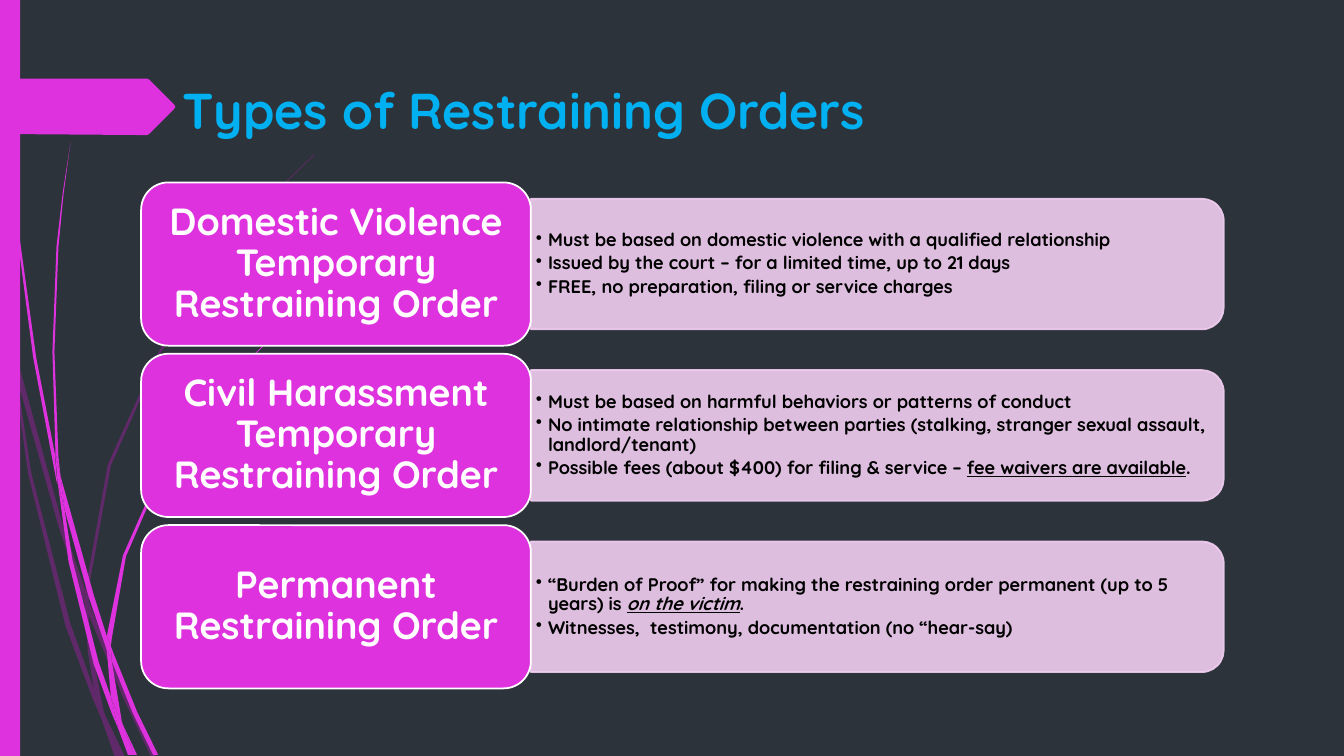
import pptx
import pptx.dml.color
import pptx.enum.shapes
import pptx.enum.text
import pptx.oxml
import pptx.oxml.ns
import pptx.util

Pt = pptx.util.Pt
Shapes = pptx.enum.shapes.MSO_SHAPE
Align = pptx.enum.text.PP_ALIGN
Anchor = pptx.enum.text.MSO_ANCHOR

FONT = "Quicksand"
MAGENTA, PLUM, PANEL = "DE32DE", "B01CB0", "F2CEF2"
GRID = Pt(0.72)

PLUM_WISPS = [
    [(11, 350), (9, 322), (0, 282), (0, 299), (10, 344)],
    [(58, 522), (84, 599), (85, 586), (62, 520), (14, 345), (17, 376)],
    [(92, 607), (88, 596), (88, 610), (123, 694), (150, 751), (155, 751), (127, 692)],
    [(119, 751), (124, 751), (105, 711)],
    [(93, 683), (70, 619), (31, 469), (17, 376), (11, 350), (28, 470), (65, 621),
     (92, 693), (101, 714), (99, 707)],
    [(84, 599), (87, 646), (93, 683), (96, 692), (105, 711), (103, 706), (91, 646),
     (88, 610), (88, 608)],
    [(88, 584), (110, 462), (160, 349), (229, 245), (268, 198), (290, 175), (312, 154),
     (312, 153), (289, 175), (268, 197), (228, 244), (158, 348), (107, 461), (85, 584),
     (85, 586), (88, 596)],
    [(101, 714), (114, 751), (119, 751)],
    [(88, 608), (88, 610), (88, 596), (85, 586), (84, 599)],
    [(96, 692), (93, 683), (99, 707), (101, 714), (119, 751), (105, 711)],
]
MAGENTA_WISPS = [
    [(7, 110), (17, 233), (33, 355), (56, 477), (57, 481), (55, 457), (55, 453),
     (36, 355), (19, 232), (8, 109), (5, 48), (4, 0), (3, 0), (4, 48)],
    [(88, 592), (106, 645), (106, 633), (106, 631), (93, 590), (60, 472), (64, 505)],
    [(113, 649), (110, 641), (111, 656), (132, 708), (152, 749), (157, 749), (136, 706)],
    [(110, 691), (98, 657), (72, 556), (64, 505), (57, 477), (68, 557), (93, 659),
     (111, 708), (117, 722), (116, 717)],
    [(60, 472), (58, 453), (54, 349), (58, 245), (63, 193), (70, 141), (62, 193),
     (56, 245), (52, 349), (55, 449)],
    [(133, 749), (136, 749), (122, 719)],
    [(57, 477), (64, 505), (60, 472), (55, 449), (55, 453)],
    [(111, 633), (125, 552), (158, 476), (205, 406), (231, 374), (245, 359), (261, 344),
     (260, 344), (245, 358), (231, 373), (204, 405), (156, 474), (122, 551), (106, 631),
     (110, 641)],
    [(117, 722), (127, 749), (131, 749)],
    [(106, 645), (110, 691), (116, 706), (122, 719), (121, 716), (111, 656), (109, 651)],
    [(106, 645), (109, 651), (111, 656), (110, 641), (106, 631), (106, 633)],
    [(116, 706), (110, 691), (116, 717), (117, 722), (130, 749), (133, 749), (122, 719)],
]
TITLE_ARROW = [(173, 108), (148, 133), (146, 134), (136, 134), (0, 133), (0, 78),
               (146, 78), (148, 79), (173, 104), (174, 106)]

ORDERS = [
    ("Domestic Violence Temporary Restraining Order", [
        [("Must be based on domestic violence with a qualified relationship", {})],
        [("Issued by the court – for a limited time, up to 21 days", {})],
        [("FREE, no preparation, filing or service charges", {})],
    ]),
    ("Civil Harassment Temporary Restraining Order", [
        [("Must be based on harmful behaviors or patterns of conduct", {})],
        [("No intimate relationship between parties (stalking, stranger sexual assault, "
          "landlord/tenant)", {})],
        [("Possible fees (about $400) for filing & service – ", {}),
         ("fee waivers are available", {"underline": True}), (".", {})],
    ]),
    ("Permanent Restraining Order", [
        [("“Burden of Proof” for making the restraining order permanent (up to 5 years) is ", {}),
         ("on the victim", {"italic": True, "underline": True}), (".", {})],
        [("Witnesses,  testimony, documentation (no “hear-say)", {})],
    ]),
]


def color(target, value, alpha=100):
    target.solid()
    target.fore_color.rgb = pptx.dml.color.RGBColor.from_string(value)
    if alpha < 100:
        node = target.fore_color._color._xClr
        child = pptx.oxml.parse_xml(
            f'<a:alpha {pptx.oxml.ns.nsdecls("a")} val="{alpha * 1000}"/>')
        node.append(child)


def paint(shape, fill, alpha=100, line=None):
    shape.shadow.inherit = False
    color(shape.fill, fill, alpha)
    if line:
        color(shape.line.fill, line, alpha)
        shape.line.width = Pt(1.25)
    else:
        shape.line.fill.background()


def add_text(para, text, size, fill, italic=None, underline=None):
    span = para.add_run()
    span.text = text
    span.font.name, span.font.size, span.font.bold = FONT, Pt(size), True
    span.font.italic, span.font.underline = italic, underline
    color(span.font.fill, fill)


def set_frame(frame, across, down):
    frame.word_wrap = True
    frame.auto_size = pptx.enum.text.MSO_AUTO_SIZE.NONE
    frame.vertical_anchor = Anchor.MIDDLE
    frame.margin_left = frame.margin_right = Pt(across)
    frame.margin_top = frame.margin_bottom = Pt(down)


def add_outline(shapes, points, fill, alpha=100):
    builder = shapes.build_freeform(*points[0], scale=GRID)
    builder.add_line_segments(points[1:], close=True)
    paint(builder.convert_to_shape(), fill, alpha)


def draw_decoration(page, height):
    for wisps, fill, alpha in ((PLUM_WISPS, PLUM, 40), (MAGENTA_WISPS, MAGENTA, 100)):
        group = page.shapes.add_group_shape()
        for points in wisps:
            add_outline(group.shapes, points, fill, alpha)
    bar = page.shapes.add_shape(Shapes.RECTANGLE, 0, 0, Pt(14.4), Pt(height))
    paint(bar, MAGENTA)
    add_outline(page.shapes, TITLE_ARROW, MAGENTA)


def draw_title(page, text, left, top, width, height):
    title = page.shapes.title
    title.left, title.top, title.width, title.height = map(Pt, (left, top, width, height))
    set_frame(title.text_frame, 7.2, 3.6)
    para = title.text_frame.paragraphs[0]
    para.alignment = Align.LEFT
    add_text(para, text, 36, "00B0F0")


def draw_bullets(page, bullets, left, top, width, height):
    frame = page.shapes.add_textbox(*map(Pt, (left, top, width, height))).text_frame
    set_frame(frame, 3.6, 2.16)
    for index, spans in enumerate(bullets):
        para = frame.add_paragraph() if index else frame.paragraphs[0]
        properties = para._p.get_or_add_pPr()
        properties.set("marL", str(Pt(8.64)))
        properties.set("indent", str(-Pt(8.64)))
        properties.append(pptx.oxml.parse_xml(
            f'<a:buChar {pptx.oxml.ns.nsdecls("a")} char="•"/>'))
        para.line_spacing = 0.9
        para.space_after = Pt(2.5)
        for text, style in spans:
            add_text(para, text, 13, "000000", **style)


def draw_order(page, name, bullets, left, top, width, height):
    block_width = width * 0.36
    panel_left, panel_width, panel_height = left + block_width, width * 0.64, height * 0.8
    panel = page.shapes.add_shape(
        Shapes.ROUND_2_SAME_RECTANGLE,
        Pt(panel_left + (panel_width - panel_height) / 2),
        Pt(top + (height - panel_width) / 2), Pt(panel_height), Pt(panel_width))
    panel.rotation = 90
    paint(panel, PANEL, 90, PANEL)
    draw_bullets(page, bullets, panel_left, top + height * 0.14,
                 panel_width - 4.5, height * 0.72)

    block = page.shapes.add_shape(
        Shapes.ROUNDED_RECTANGLE, Pt(left), Pt(top), Pt(block_width), Pt(height))
    paint(block, MAGENTA, line="FFFFFF")
    set_frame(block.text_frame, 7.92, 4.32)
    para = block.text_frame.paragraphs[0]
    para.alignment, para.line_spacing = Align.CENTER, 0.9
    add_text(para, name, 27, "FFFFFF")


def main():
    deck = pptx.Presentation()
    deck.slide_width, deck.slide_height = Pt(960), Pt(540)
    page = deck.slides.add_slide(deck.slide_layouts[5])
    color(page.background.fill, "2C333A")
    draw_decoration(page, 540)
    draw_title(page, "Types of Restraining Orders", 123.1, 49, 702, 57.6)
    for row, (name, bullets) in enumerate(ORDERS):
        draw_order(page, name, bullets, 100.8, 130.3 + row * 122.4, 773.3, 116.6)
    deck.save("out.pptx")


if __name__ == "__main__":
    main()
